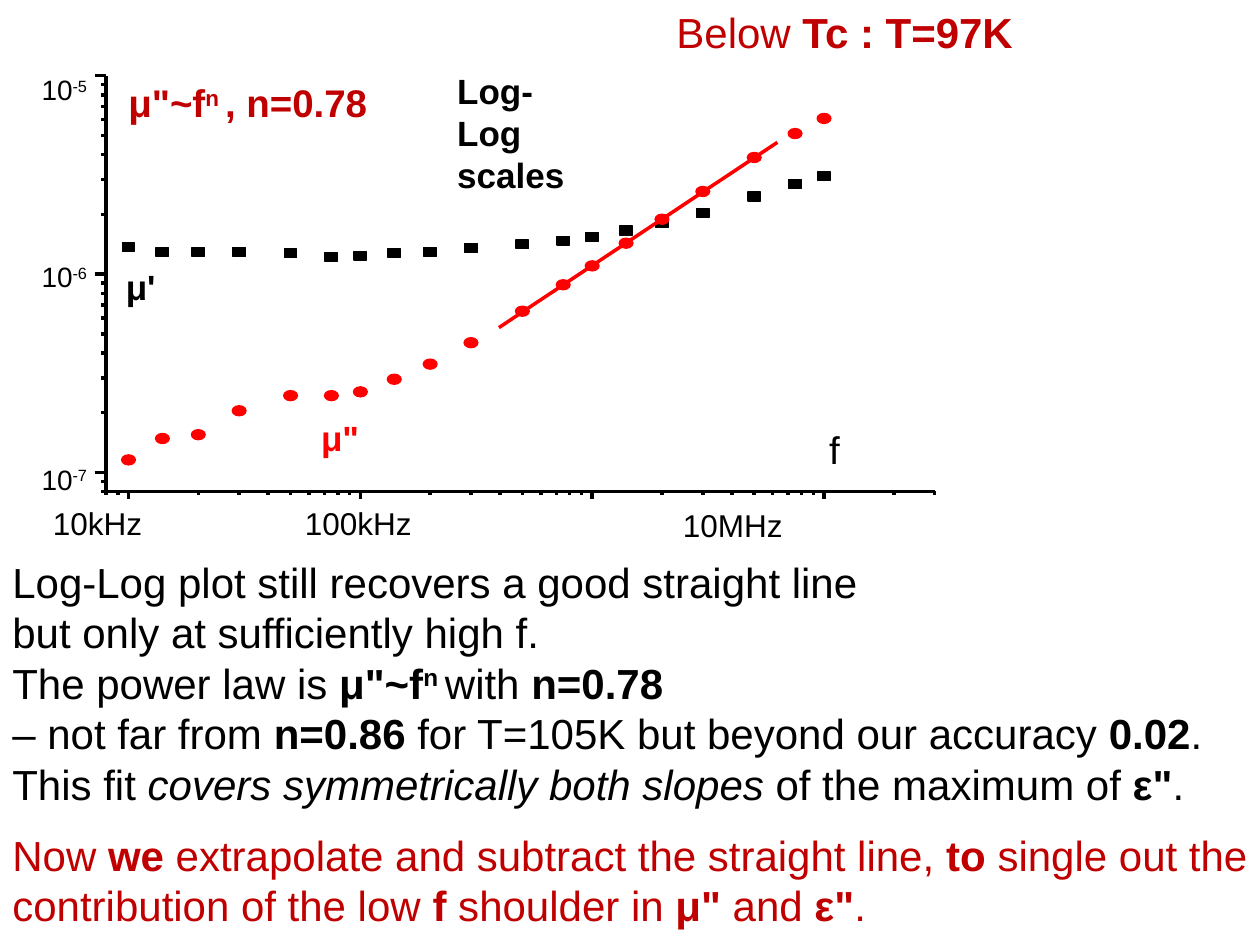
"""Build a slide with a log-log plot of two data sets and its reading."""
import math
from typing import NamedTuple

import pptx
import pptx.dml.color
import pptx.enum.shapes
import pptx.enum.text
import pptx.oxml.ns
import pptx.util
from lxml import etree
from pptx.util import Inches

BLACK, RED, DARK = "000000", "FF0000", "C00000"
LEFT, RIGHT, TOP, FLOOR = 0.84, 7.42, 0.6, 3.9
KIND = pptx.enum.shapes.MSO_SHAPE


class Bit(NamedTuple):
    text: str
    style: str = ""


class Para(NamedTuple):
    bits: list[Bit]
    tint: str = BLACK
    space: float = 0


class Label(NamedTuple):
    left: float
    top: float
    width: float
    height: float
    size: float
    paras: list[Para]
    inset: bool = False
    middle: bool = False


class Series(NamedTuple):
    kind: KIND
    tint: str
    width: float
    height: float
    mids: list[float]


def plain(text: str, style: str = "", tint: str = BLACK) -> list[Para]:
    return [Para([Bit(text, style)], tint)]


def power(exp: str) -> list[Para]:
    return [Para([Bit("10"), Bit(exp, "^")])]


BODY = [
    Para([Bit("Log-Log plot still recovers a good straight line")]),
    Para([Bit("but only at sufficiently high f.")]),
    Para([Bit("The power law is "), Bit("μ\"~f", "b"), Bit("n ", "b^"),
          Bit("with "), Bit("n=0.78", "b")]),
    Para([Bit("– not far from "), Bit("n=0.86", "b"),
          Bit(" for T=105K but beyond our accuracy"), Bit(" 0.02", "b"), Bit(".")]),
    Para([Bit("This fit "), Bit("covers symmetrically both slopes ", "i"),
          Bit("of the maximum of "), Bit("ε\"", "b"), Bit(".")]),
    Para([Bit("Now"), Bit(" we", "b"),
          Bit(" extrapolate and subtract the straight line, "), Bit("to", "b"),
          Bit(" single out the contribution of the low "), Bit("f", "b"),
          Bit(" shoulder in "), Bit("μ\" ", "b"), Bit("and "),
          Bit("ε\"", "b"), Bit(".")], DARK, 12),
]

LABELS = [
    Label(0, 4.3, 10, 3.2, 24, BODY, True, True),
    Label(0.33, 0.58, 0.4, 0.27, 16, power("-5")),
    Label(0.33, 2.06, 0.4, 0.27, 16, power("-6")),
    Label(0.33, 3.67, 0.4, 0.27, 16, power("-7")),
    Label(0.42, 4, 1.17, 0.42, 18, plain("10kHz")),
    Label(2.42, 4, 1.17, 0.42, 18, plain("100kHz")),
    Label(5.42, 4.02, 2.03, 0.46, 18, plain("10MHz")),
    Label(6.58, 3.38, 1.34, 0.41, 22, plain("f")),
    Label(0.9, 2.06, 0.72, 0.5, 20, plain("μ'", "b"), True),
    Label(2.45, 3.26, 0.84, 0.5, 20, plain("μ\"", "b", RED), True),
    Label(3.53, 0.5, 1.29, 0.77, 20,
          plain("Log-Log", "b") + plain("scales", "b"), True),
    Label(0.92, 0.58, 2.25, 0.47, 22,
          [Para([Bit("μ\"~f", "b"), Bit("n ", "b^"), Bit(", n=0.78", "b")], DARK)],
          True),
    Label(5.27, 0, 2.99, 0.5, 24,
          [Para([Bit("Below "), Bit("Tc : T=97K", "b")], DARK)], True),
]

SERIES = [
    Series(KIND.RECTANGLE, BLACK, 0.1, 0.07,
           [1.96, 2, 2, 2, 2.01, 2.04, 2.03, 2.01, 2, 1.97,
            1.94, 1.91, 1.88, 1.83, 1.77, 1.69, 1.56, 1.46, 1.4]),
    Series(KIND.OVAL, RED, 0.11, 0.08,
           [3.65, 3.48, 3.45, 3.26, 3.14, 3.14, 3.11, 3.01, 2.89, 2.72,
            2.47, 2.26, 2.11, 1.93, 1.74, 1.52, 1.25, 1.06, 0.94]),
]


def paint(tint: str) -> pptx.dml.color.RGBColor:
    return pptx.dml.color.RGBColor.from_string(tint)


def place_x(freq: float) -> float:
    return 1.02 + 1.84 * math.log10(freq)


def place_y(value: float) -> float:
    return 3.75 - 1.575 * math.log10(value)


def draw_line(slide, x1: float, y1: float, x2: float, y2: float,
              tint: str = BLACK) -> None:
    line = slide.shapes.add_connector(
        pptx.enum.shapes.MSO_CONNECTOR.STRAIGHT,
        Inches(x1), Inches(y1), Inches(x2), Inches(y2))
    line.line.color.rgb = paint(tint)
    line.line.width = Inches(0)
    etree.SubElement(line._element.spPr, pptx.oxml.ns.qn("a:effectLst"))


def draw_axes(slide) -> None:
    draw_line(slide, LEFT, FLOOR, RIGHT, FLOOR)
    draw_line(slide, LEFT, FLOOR, LEFT, TOP)
    steps = [(n, 10 ** k) for k in range(-1, 4) for n in range(1, 10)]
    for n, base in steps:
        mark = n * base
        if 0.79 < mark < 3001:
            x = place_x(mark)
            draw_line(slide, x, FLOOR + (0.06 if n == 1 else 0.03), x, FLOOR)
        if 0.79 < mark < 101:
            y = place_y(mark)
            draw_line(slide, LEFT - (0.09 if n == 1 else 0.04), y, LEFT, y)


def draw_series(slide, series: Series) -> None:
    freqs = [n * 10 ** k for k in range(4) for n in (1, 1.4, 2, 3, 5, 7.5)]
    for freq, mid in zip(freqs, series.mids):
        dot = slide.shapes.add_shape(
            series.kind,
            Inches(place_x(freq) - series.width / 2),
            Inches(mid - series.height / 2),
            Inches(series.width), Inches(series.height))
        dot.shadow.inherit = False
        dot.fill.solid()
        dot.fill.fore_color.rgb = paint(series.tint)
        dot.line.color.rgb = paint(series.tint)
        dot.line.width = Inches(0)


def write_para(target, para: Para, size: float) -> None:
    target.text = para.bits[0].text
    target.space_before = pptx.util.Pt(para.space)
    for bit in para.bits[1:]:
        target.add_run().text = bit.text
    for run, bit in zip(target.runs, para.bits):
        run.font.name = "Arial"
        run.font.size = pptx.util.Pt(size)
        run.font.bold = "b" in bit.style
        run.font.italic = "i" in bit.style
        run.font.color.rgb = paint(para.tint)
        if "^" in bit.style:
            run.font._element.set("baseline", "30000")


def draw_label(slide, label: Label) -> None:
    box = slide.shapes.add_textbox(
        Inches(label.left), Inches(label.top),
        Inches(label.width), Inches(label.height))
    frame = box.text_frame
    frame.word_wrap = True
    if label.middle:
        frame.vertical_anchor = pptx.enum.text.MSO_ANCHOR.MIDDLE
    if not label.inset:
        frame.margin_left = frame.margin_right = Inches(0)
        frame.margin_top = frame.margin_bottom = Inches(0)
    for rank, para in enumerate(label.paras):
        target = frame.add_paragraph() if rank else frame.paragraphs[0]
        write_para(target, para, label.size)


def main() -> None:
    deck = pptx.Presentation()
    deck.slide_width, deck.slide_height = Inches(10), Inches(7.5)
    slide = deck.slides.add_slide(deck.slide_layouts[6])
    draw_axes(slide)
    for series in SERIES:
        draw_series(slide, series)
    draw_line(slide, 3.96, 2.6, 6.17, 1.13, RED)
    for label in LABELS:
        draw_label(slide, label)
    deck.save("out.pptx")


if __name__ == "__main__":
    main()
